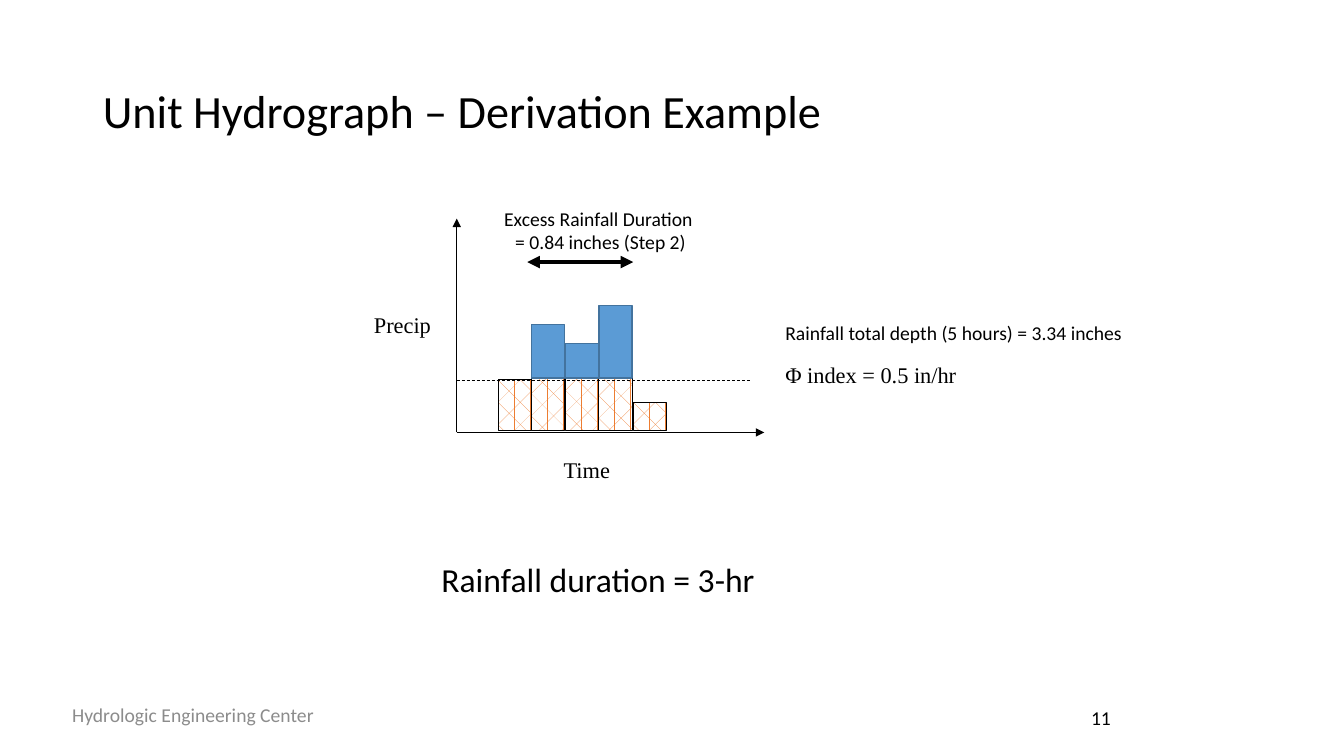
from lxml.etree import SubElement
from pptx import Presentation
from pptx.dml.color import RGBColor
from pptx.enum.dml import MSO_LINE_DASH_STYLE as Dash, MSO_PATTERN_TYPE as Pattern
from pptx.enum.shapes import MSO_CONNECTOR_TYPE as Connector, MSO_SHAPE as Shape
from pptx.enum.text import MSO_ANCHOR as Anchor, MSO_AUTO_SIZE as AutoSize, PP_ALIGN as Align
from pptx.oxml.ns import qn
from pptx.util import Emu, Pt

PX = 9144
COLORS = {
    "ink": "000000",
    "muted": "8C8C8C",
    "paper": "FFFFFF",
    "loss": "ED7D31",
    "excess": "5B9BD5",
    "excess_edge": "43739E",
}
SERIF = "Times New Roman"


class SlideBuilder:
    def __init__(self, deck, sans="Calibri"):
        self.sans = sans
        self.page = deck.slides.add_slide(deck.slide_layouts[5])

    def px(self, *lengths):
        return [Emu(length * PX) for length in lengths]

    def color(self, name):
        return RGBColor.from_string(COLORS[name])

    def fill_text(self, frame, lines, size, font=None, color="ink", align=Align.LEFT,
                  anchor=Anchor.TOP, spacing=None, wrap=True):
        frame.auto_size = AutoSize.NONE
        frame.word_wrap = wrap
        frame.vertical_anchor = anchor
        for index, line in enumerate(lines):
            para = frame.paragraphs[0] if index == 0 else frame.add_paragraph()
            para.text = line
            para.alignment = align
            if spacing:
                para.line_spacing = spacing
            para.font.size = Pt(size)
            para.font.name = font or self.sans
            para.font.color.rgb = self.color(color)

    def title(self, text, place, size):
        box = self.page.shapes.title
        box.left, box.top, box.width, box.height = self.px(*place)
        self.fill_text(box.text_frame, [text], size, anchor=Anchor.MIDDLE, spacing=0.9)

    def text(self, lines, place, size, **style):
        box = self.page.shapes.add_textbox(*self.px(*place))
        self.fill_text(box.text_frame, lines, size, **style)

    def bar(self, left, top, width, base, excess=False):
        bar = self.page.shapes.add_shape(
            Shape.RECTANGLE, *self.px(left, top, width, base - top))
        bar.shadow.inherit = False
        if excess:
            bar.fill.solid()
            bar.fill.fore_color.rgb = self.color("excess")
        else:
            bar.fill.patterned()
            bar.fill.pattern = Pattern.DIVOT
            bar.fill.fore_color.rgb = self.color("loss")
            bar.fill.back_color.rgb = self.color("paper")
        bar.line.color.rgb = self.color("excess_edge" if excess else "ink")
        bar.line.width = Pt(1 if excess else 0.75)

    def line(self, start, end, width, arrows=(), dash=None):
        line = self.page.shapes.add_connector(
            Connector.STRAIGHT, *self.px(*start, *end))
        line.line.color.rgb = self.color("ink")
        line.line.width = Pt(width)
        if dash:
            line.line.dash_style = dash
        properties = line._element.spPr
        outline = properties.find(qn("a:ln"))
        for arrow in arrows:
            SubElement(outline, qn(f"a:{arrow}"), type="triangle")
        SubElement(properties, qn("a:effectLst"))


def main():
    deck = Presentation()
    deck.slide_width, deck.slide_height = Emu(1333 * PX), Emu(750 * PX)
    slide = SlideBuilder(deck)

    slide.title("Unit Hydrograph – Derivation Example", (92, 40, 1150, 145), 33)
    slide.text(["Rainfall total depth (5 hours) = 3.34 inches"],
               (769, 318, 391, 30), 14, spacing=0.8)
    slide.text(["Hydrologic Engineering Center"], (0, 689, 383, 40), 14,
               color="muted", align=Align.CENTER, anchor=Anchor.MIDDLE)
    slide.text(["11"], (942, 695, 300, 40), 14, align=Align.CENTER)

    origin = (453, 429)
    for axis_end in ((453, 217), (758, 429)):
        slide.line(origin, axis_end, 0.75, arrows=["tailEnd"])
    slide.text(["Time"], (503, 448, 158, 37), 16, font=SERIF, align=Align.CENTER)
    slide.text(["Precip"], (361, 304, 84, 37), 16, font=SERIF)

    bar_width = 33
    hours = [494 + hour * 67 // 2 for hour in range(5)]
    for left, top in zip(hours, (377, 324, 343, 304, 399)):
        slide.bar(left, top, bar_width, 427)

    slide.line((453, 377), (744, 377), 0.5, dash=Dash.DASH)
    slide.text(["Φ index = 0.5 in/hr"], (769, 353, 196, 37), 16, font=SERIF)
    slide.line((523, 260), (628, 260), 3, arrows=["headEnd", "tailEnd"])
    slide.text(["Excess Rainfall Duration", " = 0.84 inches (Step 2)"],
               (489, 200, 209, 57), 14, align=Align.CENTER, wrap=False)

    for left, top in zip(hours[1:4], (322, 341, 303)):
        slide.bar(left, top, bar_width, 375, excess=True)

    slide.text(["Rainfall duration = 3-hr"], (428, 550, 416, 34), 24)
    deck.save("out.pptx")


if __name__ == "__main__":
    main()
